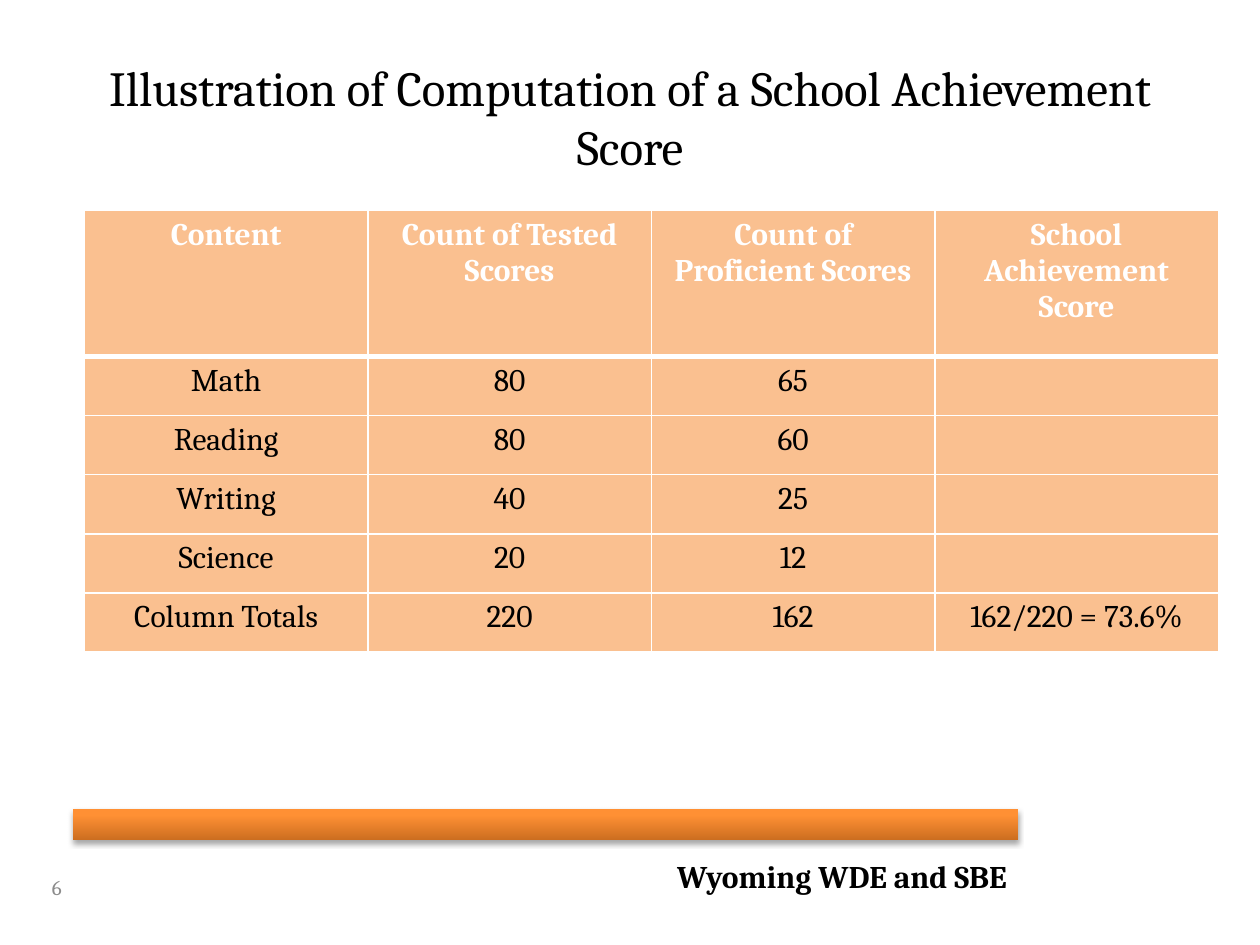
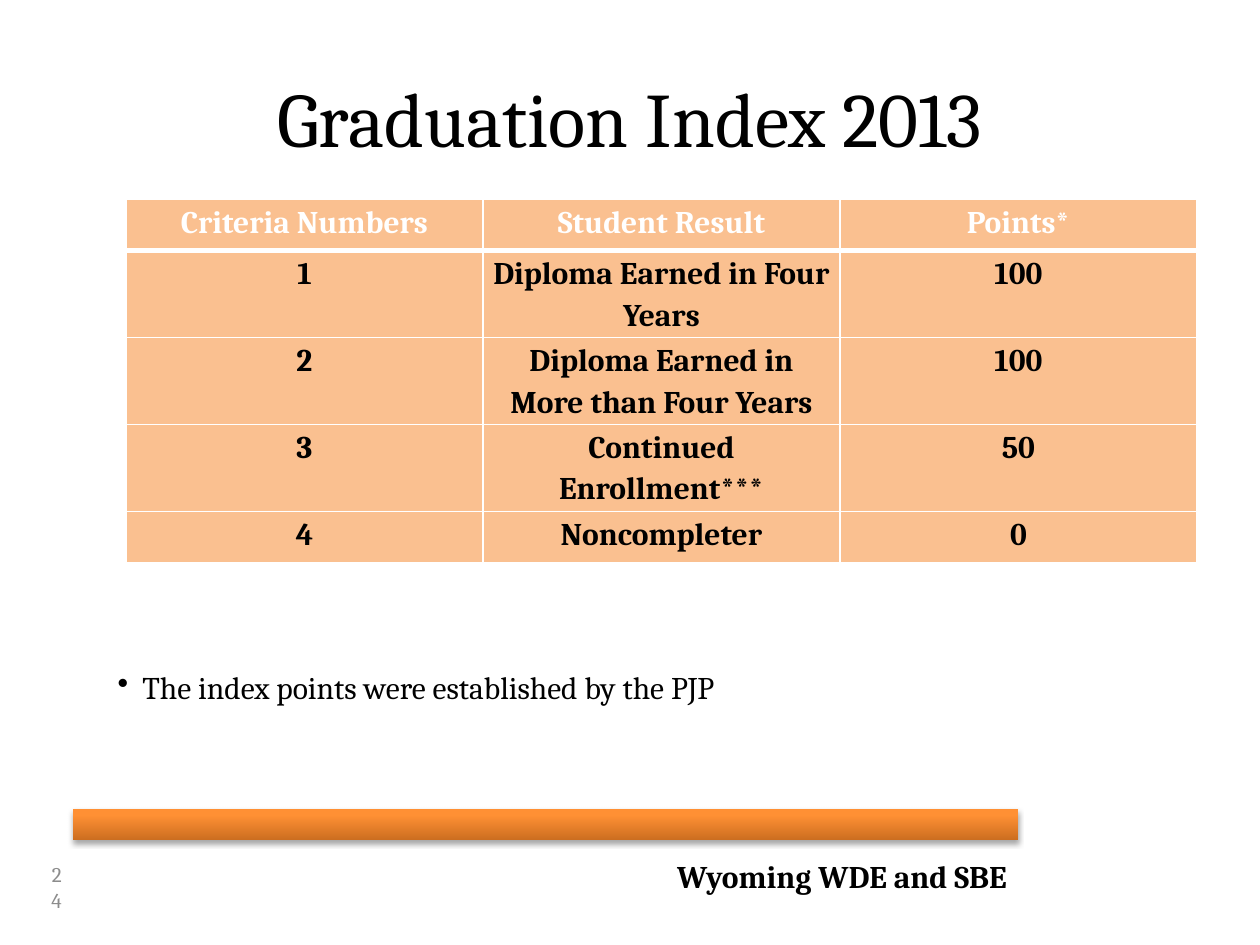
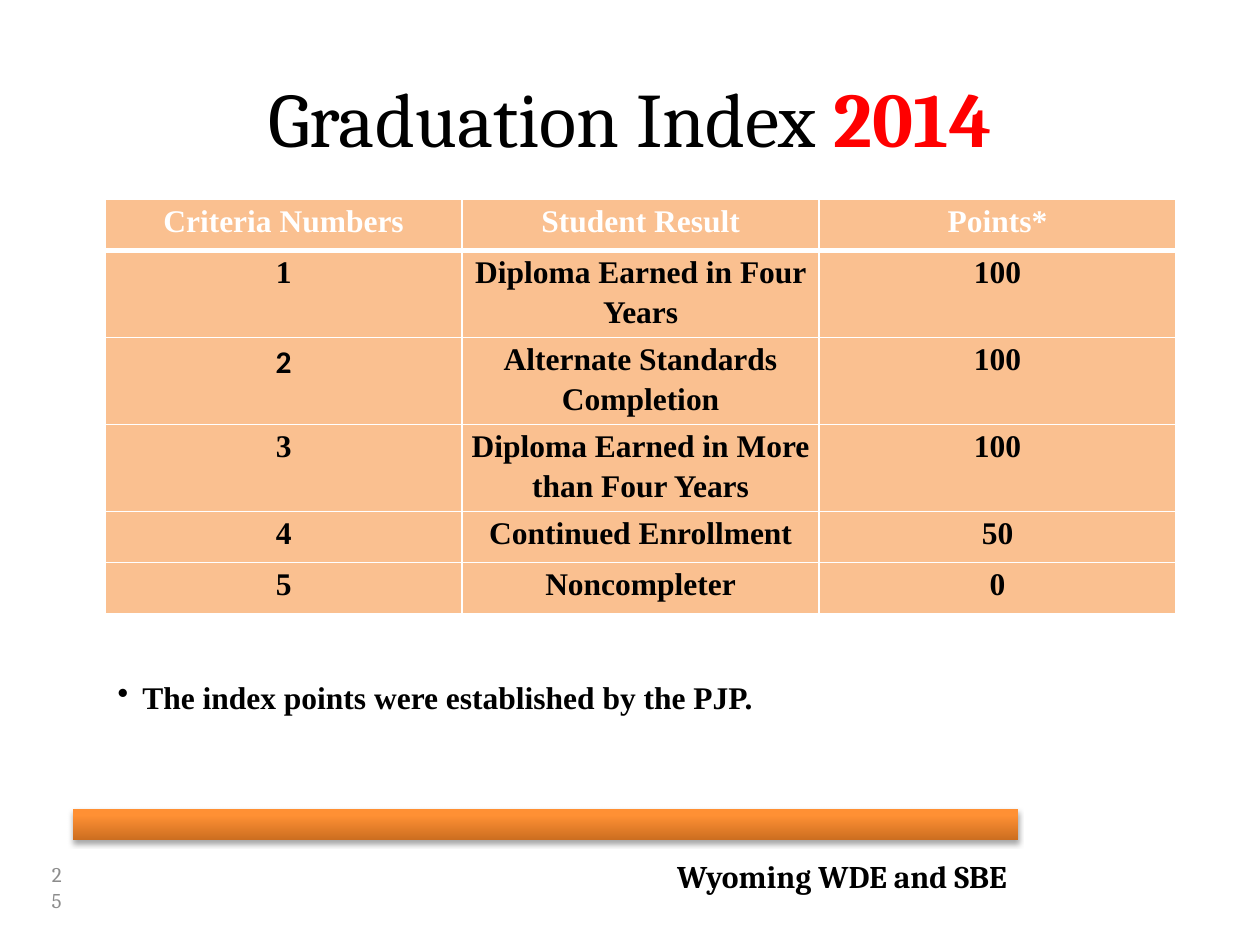
from copy import deepcopy
from dataclasses import dataclass, field
from typing import NamedTuple

from lxml.etree import SubElement
from pptx import Presentation
from pptx.dml.color import RGBColor
from pptx.enum.shapes import MSO_SHAPE as Preset
from pptx.enum.text import MSO_ANCHOR as Anchor, MSO_AUTO_SIZE as AutoSize, PP_ALIGN as Align
from pptx.oxml.ns import qn
from pptx.util import Cm, Pt

# Shared look
BLACK, WHITE, RED, GREY, PEACH = "000000", "FFFFFF", "FF0000", "8C8C8C", "FAC090"
BAR_STOPS = [(0, "CC6E20"), (0.8, "FF9034"), (1, "FF9136")]
SERIF, ROMAN, SANS = "Cambria", "Times New Roman", "Calibri"
FOOTER = "Wyoming WDE and SBE"
TITLE_ONLY = 5


class Box(NamedTuple):
    left: float
    top: float
    width: float
    height: float


class Span(NamedTuple):
    text: str
    size: float = 18
    font: str = SERIF
    color: str = BLACK
    bold: bool = False


@dataclass
class Grid:
    left: float
    top: float
    width: float
    row_heights: list[float]
    rows: list[list[str]]
    font: str = SERIF
    body_bold: bool = True
    tight: bool = True
    other_fonts: dict[tuple[int, int], str] = field(default_factory=dict)


@dataclass
class Page:
    number: str
    title: list[Span]
    grid: Grid
    note: Span | None = None
    note_top: float = 0


def rgb(color: str) -> RGBColor:
    return RGBColor.from_string(color)


def lengths(box: Box) -> list[Cm]:
    return [Cm(value) for value in box]


def add_spans(para, spans: list[Span], align=Align.LEFT) -> None:
    para.alignment = align
    for span in spans:
        run = para.add_run()
        run.text = span.text
        run.font.size = Pt(span.size)
        run.font.name = span.font
        run.font.bold = span.bold
        run.font.color.rgb = rgb(span.color)


def add_text(slide, box: Box, span: Span, align=Align.LEFT):
    frame = slide.shapes.add_textbox(*lengths(box)).text_frame
    frame.word_wrap = True
    para = frame.paragraphs[0]
    add_spans(para, [span], align)
    return para


# Title, band, footer and page number
def add_title(slide, spans: list[Span]) -> None:
    title = slide.shapes.title
    title.left, title.top, title.width, title.height = lengths(Box(1.27, 0.76, 22.86, 3.18))
    frame = title.text_frame
    frame.auto_size = AutoSize.NONE
    frame.vertical_anchor = Anchor.MIDDLE
    add_spans(frame.paragraphs[0], spans, Align.CENTER)


def add_band(slide) -> None:
    band = slide.shapes.add_shape(Preset.RECTANGLE, *lengths(Box(1.47, 16.3, 19.05, 0.64)))
    band.line.fill.background()
    band.fill.gradient()
    band.fill.gradient_angle = 90
    properties = band._element.spPr
    stop_list = properties.find(qn("a:gradFill")).find(qn("a:gsLst"))
    stop_list.append(deepcopy(stop_list[-1]))
    for stop, (position, color) in zip(band.fill.gradient_stops, BAR_STOPS):
        stop.position = position
        stop.color.rgb = rgb(color)
    band.shadow.inherit = False
    shadow = SubElement(properties.find(qn("a:effectLst")), qn("a:outerShdw"),
                        blurRad=str(Pt(3.1)), dist=str(Pt(1.8)), dir="5400000", rotWithShape="0")
    shade = SubElement(shadow, qn("a:srgbClr"), val=BLACK)
    SubElement(shade, qn("a:alpha"), val="35000")


def add_number(slide, number: str) -> None:
    oval = slide.shapes.add_shape(Preset.OVAL, *lengths(Box(0.41, 17.25, 1.27, 1.27)))
    oval.shadow.inherit = False
    oval.fill.background()
    oval.line.fill.background()
    frame = oval.text_frame
    frame.word_wrap = True
    frame.vertical_anchor = Anchor.MIDDLE
    add_spans(frame.paragraphs[0], [Span(number, 12, color=GREY)], Align.RIGHT)


# Table
def add_borders(cell, top: float, bottom: float) -> None:
    for side, points in zip("LRTB", (1, 1, top, bottom)):
        line = SubElement(cell._tc.get_or_add_tcPr(), qn(f"a:ln{side}"), w=str(Pt(points)))
        SubElement(SubElement(line, qn("a:solidFill")), qn("a:srgbClr"), val=WHITE)


def add_grid(slide, grid: Grid) -> None:
    column_count = len(grid.rows[0])
    box = Box(grid.left, grid.top, grid.width, sum(grid.row_heights))
    table = slide.shapes.add_table(len(grid.rows), column_count, *lengths(box)).table
    for column in table.columns:
        column.width = Cm(grid.width / column_count)
    for r, (texts, height) in enumerate(zip(grid.rows, grid.row_heights)):
        table.rows[r].height = Cm(height)
        header = r == 0
        for c, text in enumerate(texts):
            cell = table.cell(r, c)
            add_borders(cell, top=3 if r == 1 else 1, bottom=3 if header else 1)
            cell.fill.solid()
            cell.fill.fore_color.rgb = rgb(PEACH)
            para = cell.text_frame.paragraphs[0]
            if grid.tight:
                cell.margin_left = cell.margin_right = Cm(0.18)
                cell.margin_top = cell.margin_bottom = Cm(0)
                para.line_spacing = 1.15
            if text:
                font = grid.other_fonts.get((r, c), grid.font)
                color = WHITE if header else BLACK
                add_spans(para, [Span(text, 18, font, color, header or grid.body_bold)], Align.CENTER)


def add_note(slide, top: float, span: Span) -> None:
    para = add_text(slide, Box(2.12, top, 22.02, 1.02), span)
    properties = para._p.get_or_add_pPr()
    properties.set("marL", str(Cm(0.5)))
    properties.set("indent", str(Cm(-0.5)))
    SubElement(properties, qn("a:buChar"), char="•")


# Content
INDEX_HEADER = ["Criteria Numbers", "Student Result", "Points*"]
PAGES = [
    Page("6", [Span("Illustration of Computation of a School Achievement Score", 28)],
         Grid(1.7, 4.24, 22.86, [2.95] + [1.19] * 5, [
             ["Content", "Count of Tested Scores", "Count of Proficient Scores",
              "School Achievement Score"],
             ["Math", "80", "65", ""],
             ["Reading", "80", "60", ""],
             ["Writing", "40", "25", ""],
             ["Science", "20", "12", ""],
             ["Column Totals", "220", "162", "162/220 = 73.6%"],
         ], body_bold=False, tight=False)),
    Page("24", [Span("Graduation Index 2013", 44)],
         Grid(2.54, 4.02, 21.59, [1.03] * 5, [
             INDEX_HEADER,
             ["1", "Diploma Earned in Four Years", "100"],
             ["2", "Diploma Earned in More than Four Years", "100"],
             ["3", "Continued Enrollment***", "50"],
             ["4", "Noncompleter", "0"],
         ]),
         Span("The index points were established by the PJP"), 13.34),
    Page("25", [Span("Graduation Index ", 44), Span("2014", 44, color=RED, bold=True)],
         Grid(2.12, 4.02, 21.59, [1.03] * 6, [
             INDEX_HEADER,
             ["1", "Diploma Earned in Four Years", "100"],
             ["2", "Alternate Standards Completion", "100"],
             ["3", "Diploma Earned in More than Four Years", "100"],
             ["4", "Continued Enrollment", "50"],
             ["5", "Noncompleter", "0"],
         ], font=ROMAN, other_fonts={(2, 0): SANS}),
         Span("The index points were established by the PJP.", font=ROMAN, bold=True), 13.55),
]


def main() -> None:
    deck = Presentation()
    deck.slide_width, deck.slide_height = Cm(25.4), Cm(19.05)
    for page in PAGES:
        slide = deck.slides.add_slide(deck.slide_layouts[TITLE_ONLY])
        add_band(slide)
        add_text(slide, Box(1.7, 17.15, 18.85, 1.02), Span(FOOTER, bold=True), Align.RIGHT)
        add_title(slide, page.title)
        add_grid(slide, page.grid)
        if page.note:
            add_note(slide, page.note_top, page.note)
        add_number(slide, page.number)
    deck.save("out.pptx")


if __name__ == "__main__":
    main()
